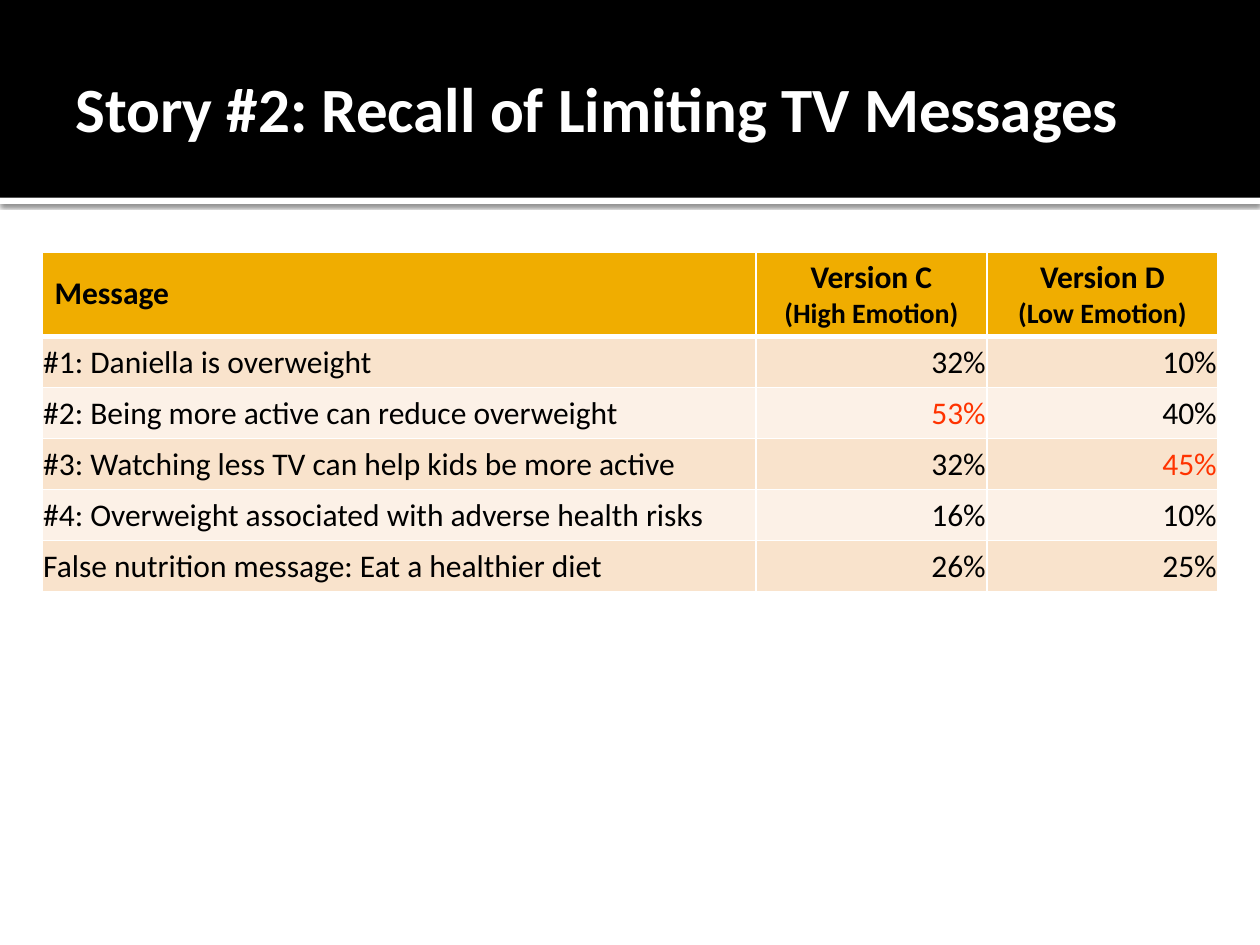
import pptx
import pptx.util
import pptx.dml.color
import pptx.enum.shapes
import pptx.enum.text
import pptx.oxml
import pptx.oxml.ns
from dataclasses import dataclass

Pt = pptx.util.Pt
ALIGN = pptx.enum.text.PP_ALIGN
MIDDLE = pptx.enum.text.MSO_ANCHOR.MIDDLE


@dataclass(frozen=True)
class Theme:
    font: str = "Calibri"
    black: str = "000000"
    white: str = "FFFFFF"
    gold: str = "F0AD00"
    bands: tuple = ("F9E3CC", "FCF1E7")
    highlight: str = "FF3300"
    title_size: int = 36
    body_size: int = 18
    note_size: int = 16


THEME = Theme()
HEADINGS = ["Message", "Version C\n(High Emotion)", "Version D\n(Low Emotion)"]
MESSAGES = [
    ("#1: Daniella is overweight", "32%", "10%"),
    ("#2: Being more active can reduce overweight", "53%", "40%"),
    ("#3: Watching less TV can help kids be more active", "32%", "45%"),
    ("#4: Overweight associated with adverse health risks", "16%", "10%"),
    ("False nutrition message: Eat a healthier diet", "26%", "25%"),
]
HIGHLIGHTED = {"53%", "45%"}


def rgb(color):
    return pptx.dml.color.RGBColor.from_string(color)


def style_paragraph(paragraph, size, color, bold=False, align=ALIGN.LEFT):
    paragraph.alignment = align
    for run in paragraph.runs:
        run.font.name = THEME.font
        run.font.size = Pt(size)
        run.font.bold = bold
        run.font.color.rgb = rgb(color)


def set_margins(holder, left, top, right, bottom):
    holder.margin_left, holder.margin_top = Pt(left), Pt(top)
    holder.margin_right, holder.margin_bottom = Pt(right), Pt(bottom)


def add_band(slide, left, top, width, height, color):
    band = slide.shapes.add_shape(pptx.enum.shapes.MSO_SHAPE.RECTANGLE,
                                  Pt(left), Pt(top), Pt(width), Pt(height))
    band.shadow.inherit = False
    band.fill.solid()
    band.fill.fore_color.rgb = rgb(color)
    band.line.fill.background()
    return band


def add_shadow(shape, blur, distance, opacity):
    effects = shape.element.spPr.find(pptx.oxml.ns.qn("a:effectLst"))
    effects.append(pptx.oxml.parse_xml(
        f'<a:outerShdw {pptx.oxml.ns.nsdecls("a")} blurRad="{Pt(blur)}" '
        f'dist="{Pt(distance)}" dir="5400000" algn="t" rotWithShape="0">'
        f'<a:srgbClr val="{THEME.black}"><a:alpha val="{opacity * 1000}"/>'
        '</a:srgbClr></a:outerShdw>'))


def add_header(slide, left, top, width, height):
    # White rule with a soft shadow below the black band
    rule = add_band(slide, left, top + height, width, 3.6, THEME.white)
    add_shadow(rule, blur=2.5, distance=0.8, opacity=60)
    add_band(slide, left, top, width, height, THEME.black)

    # Title
    title = slide.shapes.add_textbox(Pt(left + 36), Pt(top + 12.24),
                                     Pt(width - 54), Pt(98.64)).text_frame
    title.word_wrap = True
    title.vertical_anchor = MIDDLE
    set_margins(title, 7.2, 3.6, 3.6, 3.6)
    title.text = "Story #2: Recall of Limiting TV Messages"
    style_paragraph(title.paragraphs[0], THEME.title_size, THEME.white, bold=True)


def add_borders(cell, bottom_width):
    properties = cell._tc.get_or_add_tcPr()
    for side in "LRTB":
        width = bottom_width if side == "B" else 1
        properties.append(pptx.oxml.parse_xml(
            f'<a:ln{side} {pptx.oxml.ns.nsdecls("a")} w="{Pt(width)}">'
            f'<a:solidFill><a:srgbClr val="{THEME.white}"/></a:solidFill>'
            f'</a:ln{side}>'))


def fill_cell(cell, text, color, bottom_width=1):
    cell.text = text
    cell.vertical_anchor = MIDDLE
    add_borders(cell, bottom_width)
    cell.fill.solid()
    cell.fill.fore_color.rgb = rgb(color)


def add_recall_table(slide, left, top, width, height):
    heading_height, version_width = 48.2, 132
    table = slide.shapes.add_table(len(MESSAGES) + 1, len(HEADINGS), Pt(left),
                                   Pt(top), Pt(width), Pt(height)).table
    column_widths = [width - 2 * version_width, version_width, version_width]
    for column, column_width in zip(table.columns, column_widths):
        column.width = Pt(column_width)
    for row in table.rows:
        row.height = Pt((height - heading_height) / len(MESSAGES))
    table.rows[0].height = Pt(heading_height)

    # Headings: the second line is smaller
    for column, heading in enumerate(HEADINGS):
        cell = table.cell(0, column)
        fill_cell(cell, heading, THEME.gold, bottom_width=3)
        align = ALIGN.CENTER if column else ALIGN.LEFT
        sizes = (THEME.body_size, THEME.note_size)
        for paragraph, size in zip(cell.text_frame.paragraphs, sizes):
            style_paragraph(paragraph, size, THEME.black, True, align)

    # Messages with their recall rates
    for row, message in enumerate(MESSAGES, start=1):
        for column, text in enumerate(message):
            cell = table.cell(row, column)
            fill_cell(cell, text, THEME.bands[(row - 1) % 2])
            set_margins(cell, 0.7, 0.7, 0.7, 0)
            color = THEME.highlight if text in HIGHLIGHTED else THEME.black
            style_paragraph(cell.text_frame.paragraphs[0], THEME.body_size, color,
                            align=ALIGN.RIGHT if column else ALIGN.LEFT)


def main():
    deck = pptx.Presentation()
    deck.slide_width, deck.slide_height = Pt(720), Pt(540)
    slide = deck.slides.add_slide(deck.slide_layouts[6])
    add_header(slide, 0, 0, 720, 113)
    add_recall_table(slide, 24, 144, 672, 194)
    deck.save("out.pptx")


if __name__ == "__main__":
    main()
